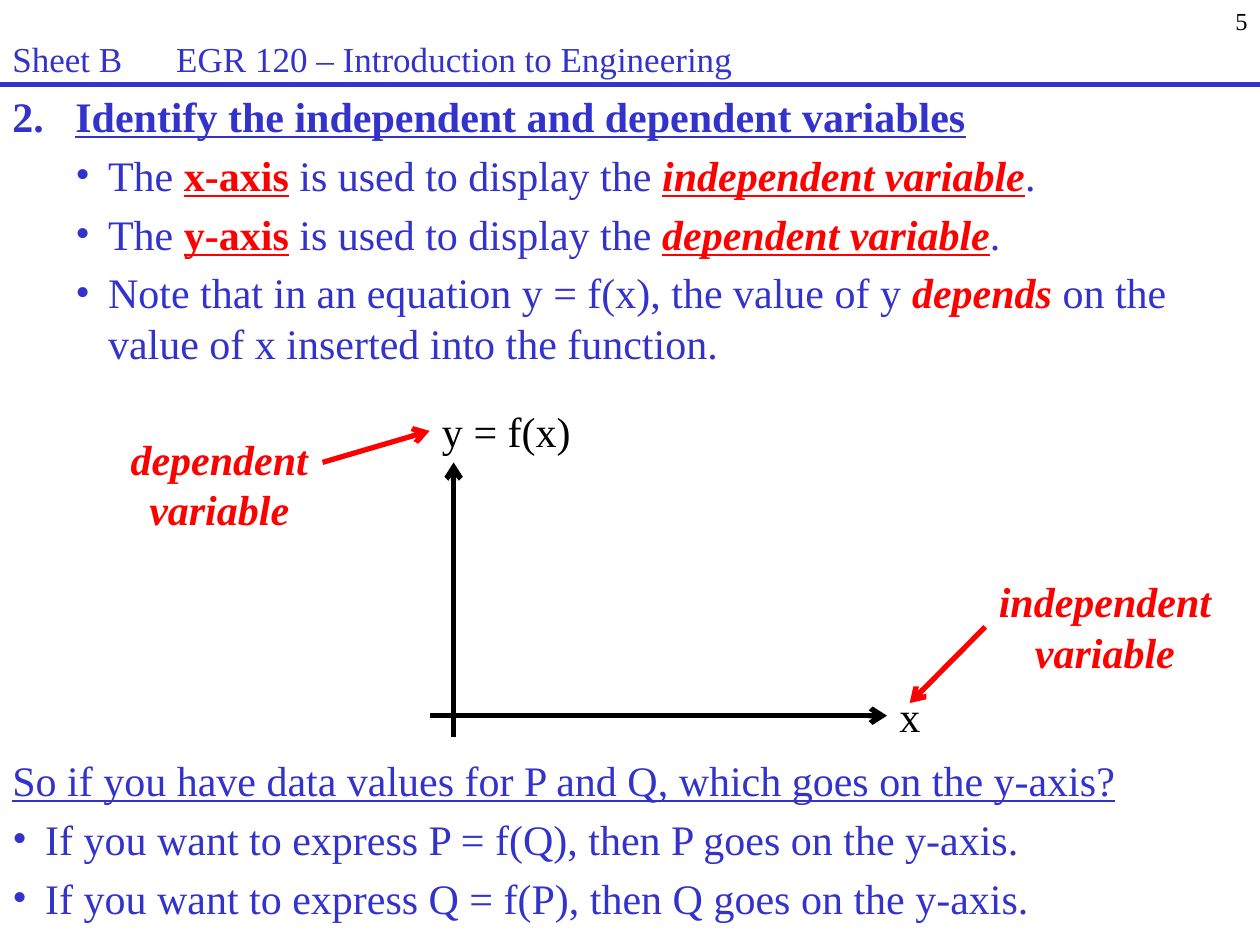
import pptx
import pptx.util
import pptx.dml.color
import pptx.enum.shapes
import pptx.enum.text
from lxml import etree
from pptx.oxml.ns import qn

# Content
HEX = {"blue": "3333CC", "red": "FF0000", "black": "000000"}
FONT = "Times New Roman"
WIDE, HIGH = 10, 7.5
RULE = 0.67

# Run styles: colour and font attributes
STYLE = {
    "body": ("blue", {}),
    "head": ("blue", {"bold": True}),
    "title": ("blue", {"bold": True, "underline": True}),
    "ask": ("blue", {"underline": True}),
    "axis": ("red", {"bold": True, "underline": True}),
    "term": ("red", {"bold": True, "italic": True, "underline": True}),
    "note": ("red", {"bold": True, "italic": True}),
    "plain": ("black", {}),
}

# Paragraphs: (layout, runs)
PAGE = [("right", [("5", "plain")])]
COURSE = [("course", [("Sheet B\tEGR 120 – Introduction to Engineering", "body")])]
POINTS = [
    ("count", [("2.\t", "head"),
               ("Identify the independent and dependent variables", "title")]),
    ("inner", [("The ", "body"), ("x-axis", "axis"),
               (" is used to display the ", "body"),
               ("independent variable", "term"), (".", "body")]),
    ("inner", [("The ", "body"), ("y-axis", "axis"),
               (" is used to display the ", "body"),
               ("dependent variable", "term"), (".", "body")]),
    ("inner", [("Note that in an equation y = f(x), the value of y ", "body"),
               ("depends", "note"),
               (" on the value of x inserted into the function.", "body")]),
]
ASK = [
    ("left", [("So if you have data values for P and Q, which goes on the y-axis?", "ask")]),
    ("outer", [("If you want to express P = f(Q), then P goes on the y-axis.", "body")]),
    ("outer", [("If you want to express Q = f(P), then Q goes on the y-axis.", "body")]),
]

# Layouts: left margin of a bullet, tab stop, alignment
ALIGN = pptx.enum.text.PP_ALIGN
FORM = {
    "left": {}, "right": {"align": ALIGN.RIGHT}, "mid": {"align": ALIGN.CENTER},
    "count": {"tab": 0.5}, "course": {"tab": 1.3},
    "inner": {"edge": 0.76}, "outer": {"edge": 0.26},
}
HANG = 0.26


def label(style, form, *lines):
    return [(form, [(line, style)]) for line in lines]


# Text boxes: name, place, size in points, wrap, paragraphs
BOXES = [
    ("page", (7.92, 0, 2.08, 0.5), 14, True, PAGE),
    ("points", (0, RULE, WIDE, 2.33), 24, True, POINTS),
    ("course", (0, 0.25, 8.58, 0.33), 20, True, COURSE),
    ("ask", (0, 5.94, WIDE, 1.4), 24, True, ASK),
    ("y", (3.41, 3.17, 1.23, 0.5), 24, False, label("plain", "left", "y = f(x)")),
    ("x", (7.04, 5.43, 0.37, 0.5), 24, False, label("plain", "left", "x")),
    ("indep", (7.82, 4.52, 1.9, 0.91), 24, False,
     label("note", "mid", "independent", "variable")),
    ("dep", (0.93, 3.39, 1.62, 0.91), 24, False,
     label("note", "mid", "dependent", "variable")),
]

# Lines: start, end, colour, arrow, joined start, joined end (box, side)
LINES = [
    ((0, RULE), (WIDE, RULE), "blue", False, None, None),
    ((3.6, 5.85), (3.6, 3.67), "black", True, None, None),
    ((3.41, 5.68), (7.04, 5.68), "black", True, None, ("x", 1)),
    ((2.56, 3.67), (3.41, 3.44), "red", True, None, ("y", 1)),
    ((7.82, 4.98), (7.22, 5.58), "red", True, ("indep", 1), None),
]

inch = pptx.util.Inches
deck = pptx.Presentation()
deck.slide_width, deck.slide_height = inch(WIDE), inch(HIGH)
slide = deck.slides.add_slide(deck.slide_layouts[6])


def paint(color, name):
    color.rgb = pptx.dml.color.RGBColor.from_string(HEX[name])


def shape_para(para, align=None, tab=None, edge=None):
    para.alignment = align
    prop = para._p.get_or_add_pPr()
    if edge is not None:
        prop.set("marL", str(inch(edge)))
        prop.set("indent", str(-inch(HANG)))
        etree.SubElement(prop, qn("a:buFont"), typeface=FONT)
        etree.SubElement(prop, qn("a:buChar"), char="•")
    if tab is not None:
        stops = etree.SubElement(prop, qn("a:tabLst"))
        etree.SubElement(stops, qn("a:tab"), pos=str(inch(tab)), algn="l")


def add_text(place, size, wrap, paras):
    box = slide.shapes.add_textbox(*map(inch, place))
    frame = box.text_frame
    frame.word_wrap = wrap
    for row, (form, runs) in enumerate(paras):
        para = frame.add_paragraph() if row else frame.paragraphs[0]
        if row and form != "mid":
            para.space_before = pptx.util.Pt(size * 0.2)
        shape_para(para, **FORM[form])
        for text, style in runs:
            run = para.add_run()
            run.text = text
            color, marks = STYLE[style]
            look = {"name": FONT, "size": pptx.util.Pt(size), **marks}
            for key, value in look.items():
                setattr(run.font, key, value)
            paint(run.font.color, color)
    return box


def add_line(start, end, color, arrow, first, last):
    kind = pptx.enum.shapes.MSO_CONNECTOR.STRAIGHT
    line = slide.shapes.add_connector(kind, *map(inch, start + end))
    if first:
        line.begin_connect(boxes[first[0]], first[1])
    if last:
        line.end_connect(boxes[last[0]], last[1])
    line.line.width = pptx.util.Pt(3)
    paint(line.line.color, color)
    if arrow:
        etree.SubElement(line.line._get_or_add_ln(), qn("a:tailEnd"), type="arrow")
    etree.SubElement(line._element.spPr, qn("a:effectLst"))


# Text first, so that the lines can join it
boxes = {name: add_text(*rest) for name, *rest in BOXES}
for item in LINES:
    add_line(*item)

deck.save("out.pptx")
